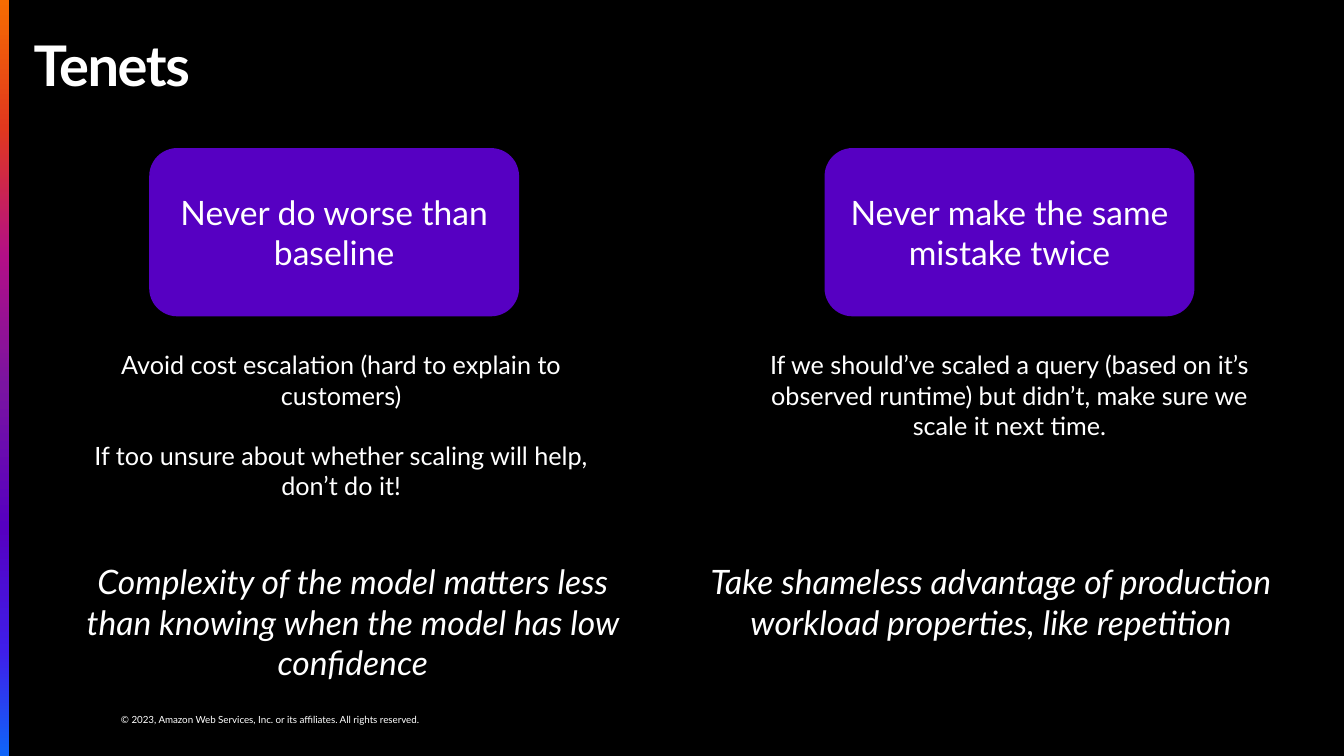
"""Builds the Tenets slide: two cards, each with an explanation and a takeaway."""
from lxml.etree import SubElement
from pptx import Presentation
from pptx.dml.color import RGBColor
from pptx.enum.shapes import MSO_SHAPE
from pptx.enum.text import MSO_ANCHOR, PP_ALIGN
from pptx.oxml.ns import qn
from pptx.util import Pt

WIDTH, HEIGHT = 960, 540
BLACK, WHITE, PURPLE = "000000", "FFFFFF", "5600C2"
BAR_WIDTH = 6.5
BAR_STOPS = [(0, "F66C02"), (17, "E1381E"), (34, "B20F87"), (51, "7A14A1"),
             (70, PURPLE), (86, "3F1EE9"), (100, "0F65F9")]
TITLE = "Tenets"
COPYRIGHT = "© 2023, Amazon Web Services, Inc. or its affiliates. All rights reserved."
TENETS = [
    {"card": ["Never do worse than baseline"],
     "reason": ["Avoid cost escalation (hard to explain to customers)",
                "If too unsure about whether scaling will help, don’t do it!"],
     "takeaway": ["Complexity of the model matters less than knowing when the model "
                  "has low confidence"]},
    {"card": ["Never make the same mistake twice"],
     "reason": ["If we should’ve scaled a query (based on it’s observed runtime) but "
                "didn’t, make sure we scale it next time."],
     "takeaway": ["Take shameless advantage of production workload properties, "
                  "like repetition"]},
]
ROWS = {
    "card": {"lefts": (106.6, 589), "top": 105.8, "width": 264.2, "height": 120.2},
    "reason": {"lefts": (61.2, 538.6), "top": 246.2, "width": 365, "height": 116.6},
    "takeaway": {"lefts": (50.4, 506.2), "top": 397.4, "width": 403.2, "height": 94.3},
}
FORMATS = {
    "title": {"size": Pt(40), "bold": True},
    "copyright": {"size": Pt(7)},
    "card": {"size": Pt(24)},
    "reason": {"size": Pt(18)},
    "takeaway": {"size": Pt(24), "italic": True},
}
PARAGRAPH_GAP = 21.6


def color(hex_value):
    return RGBColor.from_string(hex_value)


def write(shape, texts, style, align=PP_ALIGN.CENTER):
    frame = shape.text_frame
    frame.word_wrap = True
    for index, text in enumerate(texts):
        paragraph = frame.add_paragraph() if index else frame.paragraphs[0]
        paragraph.alignment = align
        if index:
            paragraph.space_before = Pt(PARAGRAPH_GAP)
        run = paragraph.add_run()
        run.text = text
        for name, value in {"name": "Lato", **FORMATS[style]}.items():
            setattr(run.font, name, value)
        run.font.color.rgb = color(WHITE)
    return frame


def add_text(slide, box, texts, style, align=PP_ALIGN.CENTER, inset=3.6):
    shape = slide.shapes.add_textbox(*map(Pt, box))
    frame = write(shape, texts, style, align)
    frame.margin_left = frame.margin_right = 0
    frame.margin_top = frame.margin_bottom = Pt(inset)
    return frame


def add_block(slide, preset, box):
    shape = slide.shapes.add_shape(preset, *map(Pt, box))
    shape.shadow.inherit = False
    shape.line.fill.background()
    return shape


def add_bar(slide):
    bar = add_block(slide, MSO_SHAPE.RECTANGLE, (0, 0, BAR_WIDTH, HEIGHT))
    bar.fill.gradient()
    bar.fill.gradient_angle = 270
    stops = bar.element.spPr.find(qn("a:gradFill")).find(qn("a:gsLst"))
    for stop in list(stops):
        stops.remove(stop)
    for percent, hex_value in BAR_STOPS:
        stop = SubElement(stops, qn("a:gs"), pos=str(percent * 1000))
        SubElement(stop, qn("a:srgbClr"), val=hex_value)


def add_tenet(slide, column, tenet):
    for style, row in ROWS.items():
        box = (row["lefts"][column], row["top"], row["width"], row["height"])
        if style == "card":
            card = add_block(slide, MSO_SHAPE.ROUNDED_RECTANGLE, box)
            card.fill.solid()
            card.fill.fore_color.rgb = color(PURPLE)
            write(card, tenet[style], style).vertical_anchor = MSO_ANCHOR.MIDDLE
        else:
            add_text(slide, box, tenet[style], style)


def main():
    presentation = Presentation()
    presentation.slide_width, presentation.slide_height = Pt(WIDTH), Pt(HEIGHT)
    slide = presentation.slides.add_slide(presentation.slide_layouts[6])
    slide.background.fill.solid()
    slide.background.fill.fore_color.rgb = color(BLACK)
    add_text(slide, (86.4, 509.8, 311.8, 8.6), [COPYRIGHT], "copyright",
             PP_ALIGN.LEFT, inset=0)
    add_bar(slide)
    title = add_text(slide, (24, 24, 912, 50.4), [TITLE], "title", PP_ALIGN.LEFT)
    title.paragraphs[0].line_spacing = 0.9
    title.paragraphs[0].runs[0].font._element.set("spc", "-100")
    for column, tenet in enumerate(TENETS):
        add_tenet(slide, column, tenet)
    presentation.save("out.pptx")


if __name__ == "__main__":
    main()
